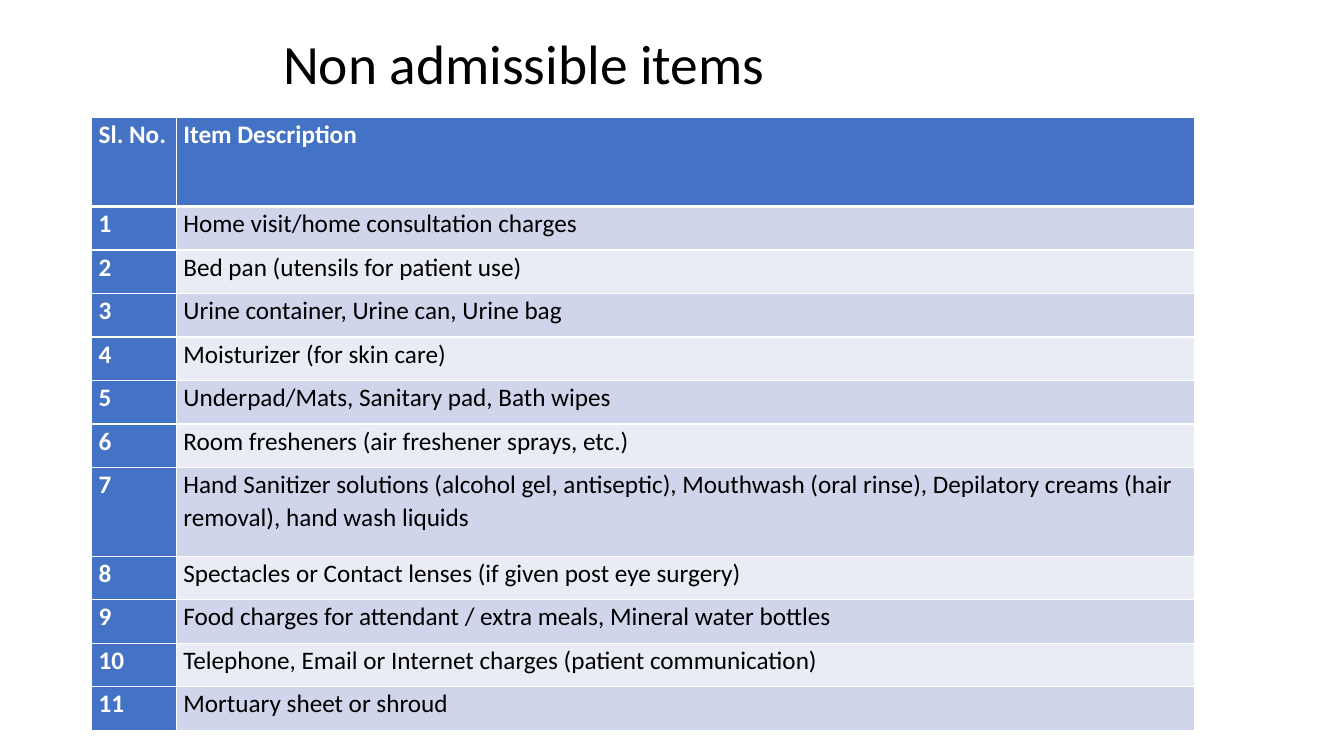
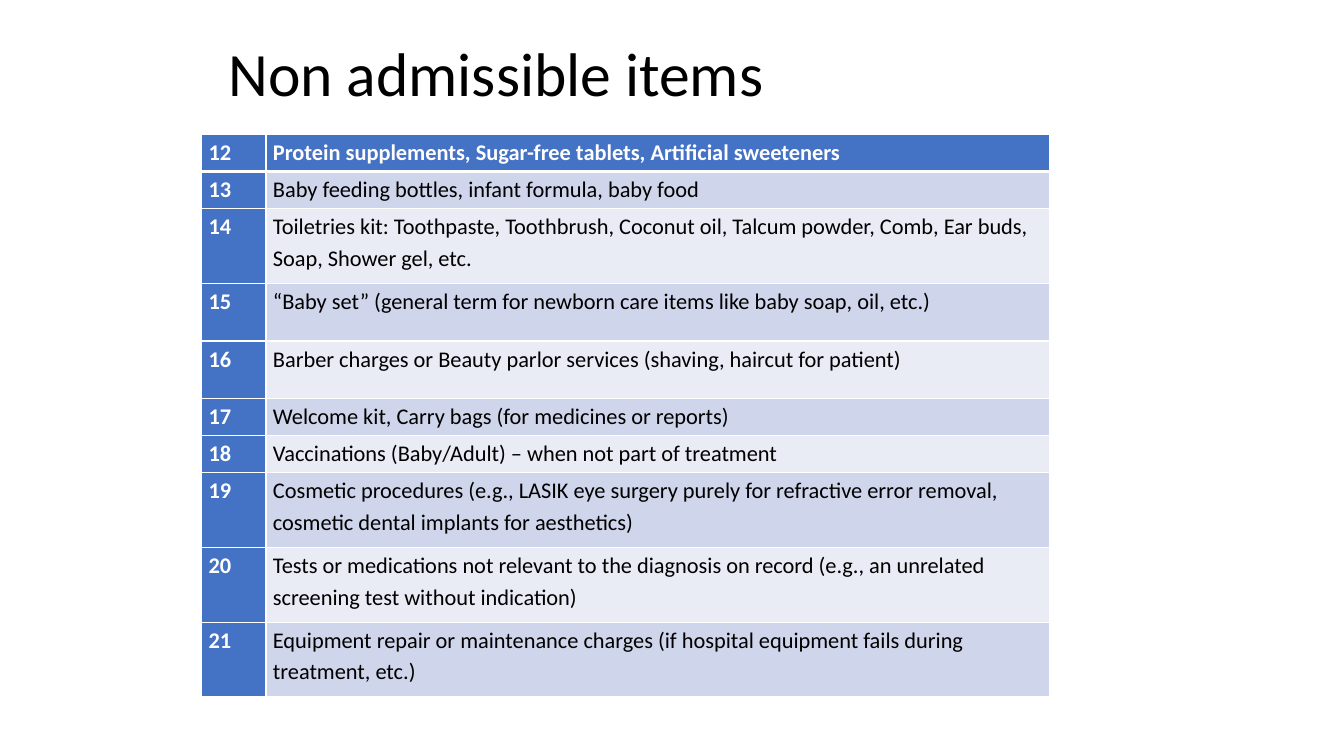
from dataclasses import dataclass

from lxml.etree import SubElement
from pptx import Presentation
from pptx.dml.color import RGBColor
from pptx.enum.text import MSO_ANCHOR, MSO_AUTO_SIZE, PP_ALIGN
from pptx.oxml import parse_xml
from pptx.oxml.ns import nsdecls, qn
from pptx.util import Pt


@dataclass(frozen=True)
class Theme:
    font: str = "Calibri"
    ink: str = "000000"
    paper: str = "FFFFFF"
    accent: str = "4472C4"
    bands: tuple = ("CFD5EA", "E9EBF5")
    first_title: float = 39.6
    next_title: float = 44
    first_table: float = 18
    next_table: float = 16
    thin: float = 1
    thick: float = 3


THEME = Theme()


def write_text(frame, text, *, size, color, bold=False, line_spacing=1.0, space_after=0):
    para = frame.paragraphs[0]
    para.alignment = PP_ALIGN.LEFT
    para.line_spacing = line_spacing
    para.space_before = Pt(0)
    para.space_after = Pt(space_after)
    span = para.add_run()
    span.text = text
    span.font.name = THEME.font
    span.font.size = Pt(size)
    span.font.bold = bold
    span.font.color.rgb = RGBColor.from_string(color)


def set_borders(cell, color, widths):
    """Draw the cell's edges; widths are left, right, top, bottom in points."""
    properties = cell._tc.get_or_add_tcPr()
    for index, (side, width) in enumerate(zip("LRTB", widths)):
        line = parse_xml(f'<a:ln{side} {nsdecls("a")} w="{Pt(width)}"/>')
        fill = SubElement(line, qn("a:solidFill"))
        SubElement(fill, qn("a:srgbClr"), val=color)
        properties.insert(index, line)


class SlideBuilder:
    """Holds the deck, its theme and the page being built."""

    def __init__(self, theme):
        self.theme = theme
        self.deck = Presentation()
        self.deck.slide_width, self.deck.slide_height = Pt(960), Pt(540)
        self.page = None

    def add_page(self):
        self.page = self.deck.slides.add_slide(self.deck.slide_layouts[5])

    def add_title(self, text, left, top, width, height, size):
        box = self.page.shapes.title
        box.left, box.top, box.width, box.height = map(Pt, (left, top, width, height))
        frame = box.text_frame
        frame.word_wrap = True
        frame.auto_size = MSO_AUTO_SIZE.NONE
        frame.vertical_anchor = MSO_ANCHOR.MIDDLE
        write_text(frame, text, size=size, color=self.theme.ink, line_spacing=0.9)

    def add_item_table(self, rows, left, top, columns, heights, size, line_spacing, inset_top=0):
        table = self.page.shapes.add_table(
            len(rows), len(columns), Pt(left), Pt(top), Pt(sum(columns)), Pt(sum(heights))
        ).table
        for column, width in zip(table.columns, columns):
            column.width = Pt(width)
        for row, height in zip(table.rows, heights):
            row.height = Pt(height)
        for row_index, texts in enumerate(rows):
            for column_index, text in enumerate(texts):
                self.fill_cell(table.cell(row_index, column_index), text, row_index,
                               column_index, size, line_spacing, inset_top)

    def fill_cell(self, cell, text, row_index, column_index, size, line_spacing, inset_top):
        theme = self.theme
        heading = row_index == 0 or column_index == 0
        cell.margin_left = cell.margin_right = Pt(5)
        cell.margin_top, cell.margin_bottom = Pt(inset_top), Pt(0)
        cell.fill.solid()
        band = theme.bands[(row_index - 1) % 2]
        cell.fill.fore_color.rgb = RGBColor.from_string(theme.accent if heading else band)
        above = theme.thick if row_index == 1 else theme.thin
        below = theme.thick if row_index == 0 else theme.thin
        set_borders(cell, theme.paper, (theme.thin, theme.thin, above, below))
        write_text(cell.text_frame, text, size=size, bold=heading,
                   color=theme.paper if heading else theme.ink,
                   line_spacing=line_spacing, space_after=8)


TITLE = "Non admissible items"
FIRST_ITEMS = [
    "Home visit/home consultation charges",
    "Bed pan (utensils for patient use)",
    "Urine container, Urine can, Urine bag",
    "Moisturizer (for skin care)",
    "Underpad/Mats, Sanitary pad, Bath wipes",
    "Room fresheners (air freshener sprays, etc.)",
    "Hand Sanitizer solutions (alcohol gel, antiseptic), Mouthwash (oral rinse), "
    "Depilatory creams (hair removal), hand wash liquids",
    "Spectacles or Contact lenses (if given post eye surgery)",
    "Food charges for attendant / extra meals, Mineral water bottles",
    "Telephone, Email or Internet charges (patient communication)",
    "Mortuary sheet or shroud",
]
NEXT_ITEMS = [
    "Protein supplements, Sugar-free tablets, Artificial sweeteners",
    "Baby feeding bottles, infant formula, baby food",
    "Toiletries kit: Toothpaste, Toothbrush, Coconut oil, Talcum powder, Comb, Ear buds, "
    "Soap, Shower gel, etc.",
    "“Baby set” (general term for newborn care items like baby soap, oil, etc.)",
    "Barber charges or Beauty parlor services (shaving, haircut for patient)",
    "Welcome kit, Carry bags (for medicines or reports)",
    "Vaccinations (Baby/Adult) – when not part of treatment",
    "Cosmetic procedures (e.g., LASIK eye surgery purely for refractive error removal, "
    "cosmetic dental implants for aesthetics)",
    "Tests or medications not relevant to the diagnosis on record (e.g., an unrelated "
    "screening test without indication)",
    "Equipment repair or maintenance charges (if hospital equipment fails during "
    "treatment, etc.)",
]


def number_items(items, start):
    return [(str(number), item) for number, item in enumerate(items, start)]


def main():
    builder = SlideBuilder(THEME)

    builder.add_page()
    builder.add_title(TITLE, 195, 24, 570, 47, THEME.first_title)
    rows = [("Sl. No.", "Item Description")] + number_items(FIRST_ITEMS, 1)
    single, double = 31.07, 63.5
    heights = [double if index in (0, 7) else single for index in range(len(rows))]
    builder.add_item_table(rows, 65.5, 84, (60.5, 727), heights, THEME.first_table, 1.07)

    builder.add_page()
    builder.add_title(TITLE, 156, 25, 570, 59, THEME.next_title)
    rows = number_items(NEXT_ITEMS, len(FIRST_ITEMS) + 1)
    single, middle, double = 26.6, 41, 53.4
    heights = [single, single, double, middle, middle, single, single] + [double] * 3
    builder.add_item_table(rows, 144, 96, (46, 560), heights, THEME.next_table, 1.15, 0.5)

    builder.deck.save("out.pptx")


if __name__ == "__main__":
    main()
